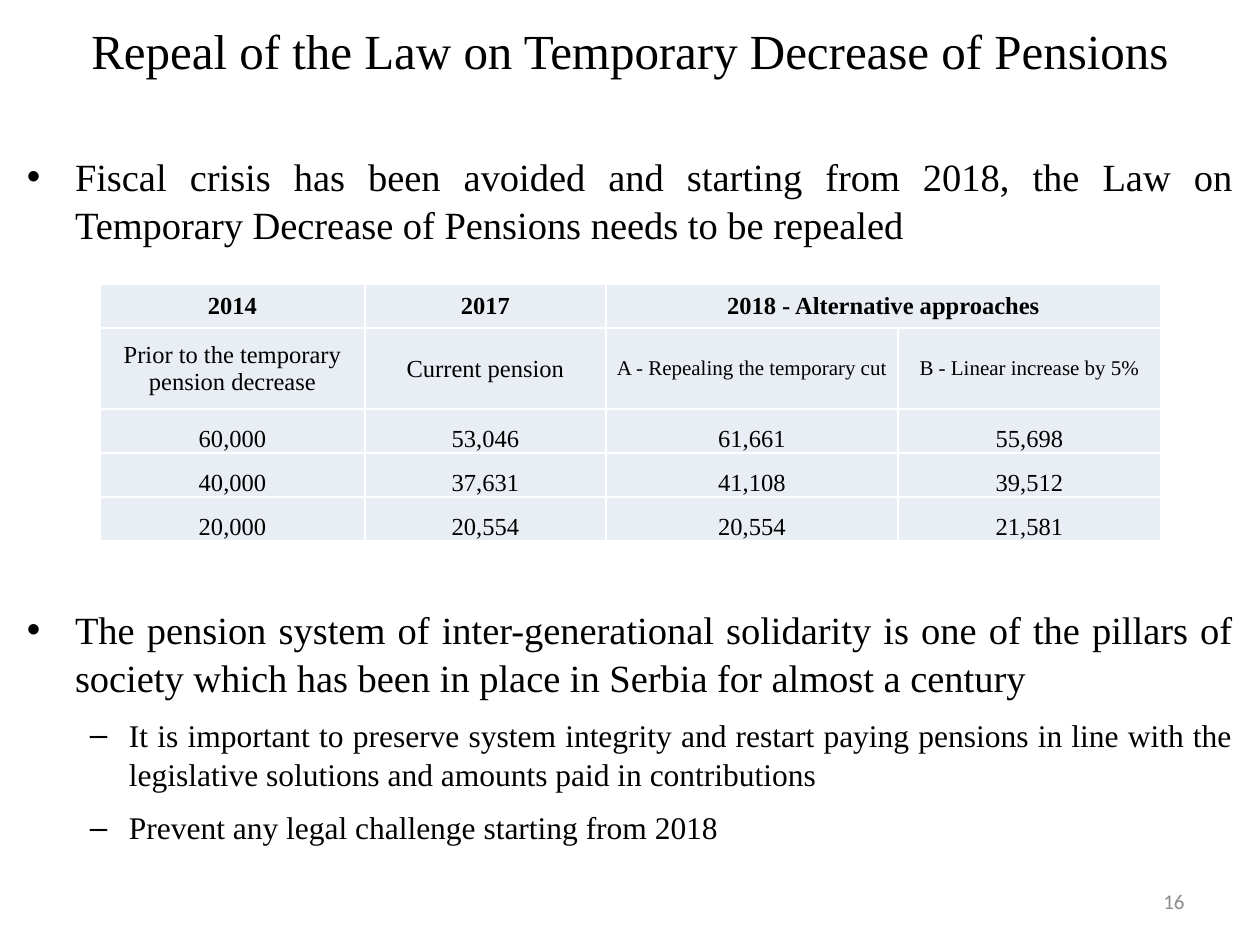
from lxml.etree import SubElement
from pptx import Presentation
from pptx.dml.color import RGBColor
from pptx.enum.text import MSO_ANCHOR as Anchor, PP_ALIGN as Align
from pptx.oxml.ns import qn
from pptx.util import Pt

PX = 914400 // 126
BLACK = RGBColor(0, 0, 0)
GREY = RGBColor(0x8C, 0x8C, 0x8C)
PALE_BLUE = RGBColor(0xE9, 0xED, 0xF4)
SERIF = "Times New Roman"


def add_text(paragraph, text, size, align, font=SERIF, color=BLACK, bold=False):
    paragraph.alignment = align
    run = paragraph.add_run()
    run.text = text
    run.font.size = Pt(size)
    run.font.name = font
    run.font.bold = bold
    run.font.color.rgb = color


def add_frame(left, top, width, height, anchor):
    shape = slide.shapes.add_textbox(left * PX, top * PX, width * PX, height * PX)
    frame = shape.text_frame
    frame.word_wrap = True
    frame.vertical_anchor = anchor
    return frame


presentation = Presentation()
presentation.slide_width = 1260 * PX
presentation.slide_height = 945 * PX
slide = presentation.slides.add_slide(presentation.slide_layouts[6])

title = add_frame(0, 0, 1260, 100, Anchor.MIDDLE)
add_text(title.paragraphs[0], "Repeal of the Law on Temporary Decrease of Pensions", 28, Align.CENTER)

BULLETS = [
    ("•", 22, 48, 48, 6, "Fiscal crisis has been avoided and starting from 2018, the Law on Temporary Decrease of Pensions needs to be repealed"),
    ("•", 22, 48, 48, 200, "The pension system of inter-generational solidarity is one of the pillars of society which has been in place in Serbia for almost a century"),
    ("–", 18, 102, 39, 4, "It is important to preserve system integrity and restart paying pensions in line with the legislative solutions and amounts paid in contributions"),
    ("–", 18, 102, 39, 4, "Prevent any legal challenge starting from 2018"),
]
body = add_frame(15, 145, 1230, 800, Anchor.TOP)
body.margin_left = body.margin_right = 12 * PX
for index, (mark, size, margin, hanging, before, text) in enumerate(BULLETS):
    paragraph = body.add_paragraph() if index else body.paragraphs[0]
    add_text(paragraph, text, size, Align.JUSTIFY)
    paragraph.line_spacing = 1.04
    paragraph.space_before = Pt(before)
    paragraph.space_after = Pt(4)
    properties = paragraph._p.get_or_add_pPr()
    properties.set("marL", str(margin * PX))
    properties.set("indent", str(-hanging * PX))
    SubElement(properties, qn("a:buFont")).set("typeface", "Arial")
    SubElement(properties, qn("a:buChar")).set("char", mark)

number = add_frame(903, 876, 294, 50, Anchor.MIDDLE)
add_text(number.paragraphs[0], "16", 12, Align.RIGHT, "Calibri", GREY)

COLUMN_WIDTHS = [265, 241, 292, 263]
ROW_HEIGHTS = [44, 81, 44, 44, 44]
ROWS = [
    ["2014", "2017", "2018 - Alternative approaches", ""],
    ["Prior to the temporary pension decrease", "Current pension", "A - Repealing the temporary cut", "B - Linear increase by 5%"],
    ["60,000", "53,046", "61,661", "55,698"],
    ["40,000", "37,631", "41,108", "39,512"],
    ["20,000", "20,554", "20,554", "21,581"],
]
table = slide.shapes.add_table(
    len(ROWS), len(COLUMN_WIDTHS), 100 * PX, 284 * PX, sum(COLUMN_WIDTHS) * PX, sum(ROW_HEIGHTS) * PX
).table
for column, width in zip(table.columns, COLUMN_WIDTHS):
    column.width = width * PX
for row, height in zip(table.rows, ROW_HEIGHTS):
    row.height = height * PX
table.cell(0, 2).merge(table.cell(0, 3))

for row_index, texts in enumerate(ROWS):
    for column_index, text in enumerate(texts):
        cell = table.cell(row_index, column_index)
        cell.margin_left = cell.margin_right = cell.margin_top = PX
        cell.margin_bottom = 0
        cell.vertical_anchor = Anchor.MIDDLE if row_index < 2 else Anchor.BOTTOM
        if text:
            size = 12 if row_index == 1 and column_index > 1 else 14
            add_text(cell.text_frame.paragraphs[0], text, size, Align.CENTER, bold=row_index == 0)
        cell_properties = cell._tc.get_or_add_tcPr()
        for side in ("a:lnL", "a:lnR", "a:lnT", "a:lnB"):
            border = SubElement(cell_properties, qn(side), w=str(Pt(1)))
            border_fill = SubElement(border, qn("a:solidFill"))
            SubElement(border_fill, qn("a:srgbClr"), val="FFFFFF")
        cell.fill.solid()
        cell.fill.fore_color.rgb = PALE_BLUE

presentation.save("out.pptx")
